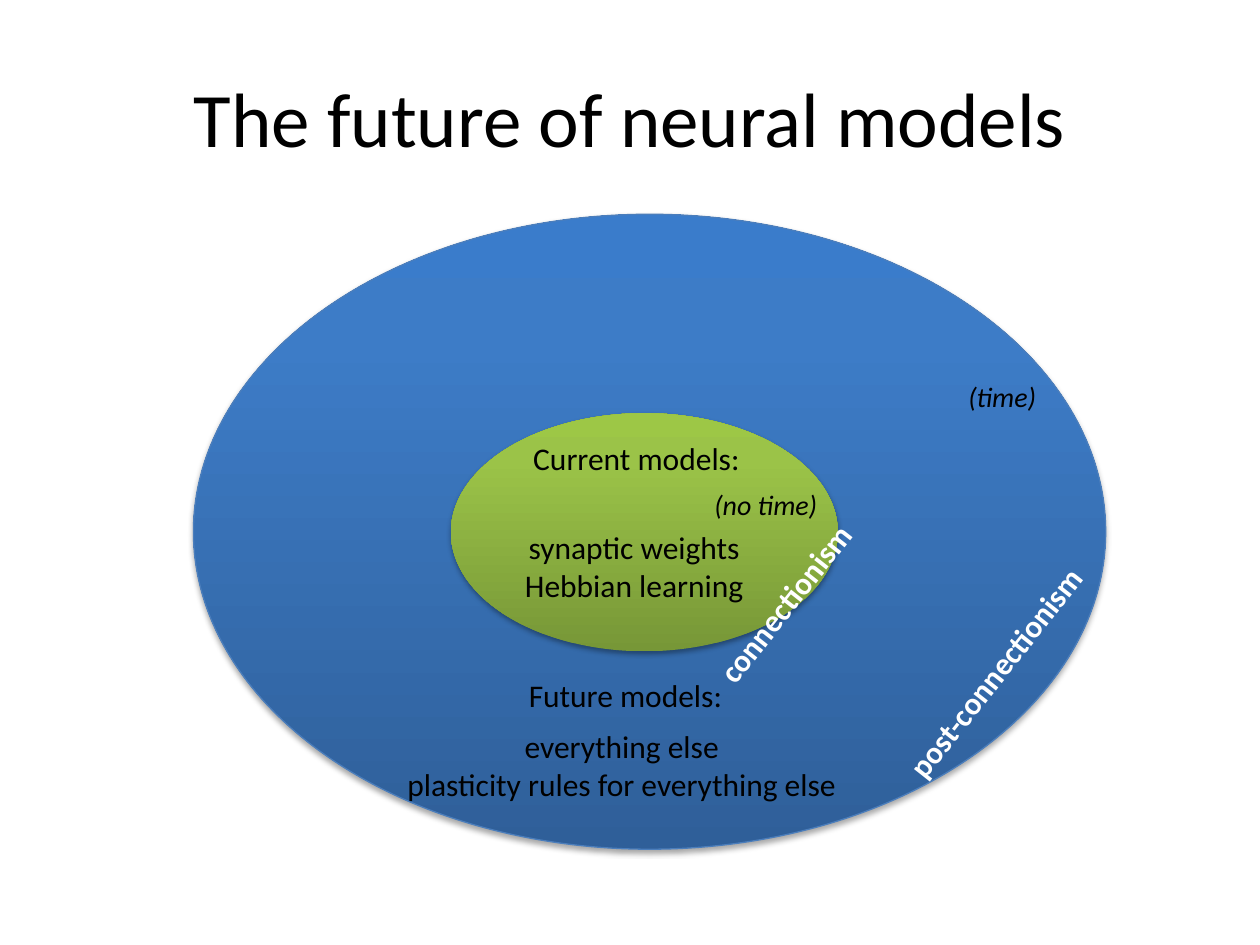
from copy import deepcopy
from dataclasses import dataclass

from lxml import etree
from pptx import Presentation
from pptx.dml.color import RGBColor
from pptx.enum.shapes import MSO_SHAPE
from pptx.enum.text import MSO_ANCHOR, MSO_AUTO_SIZE, PP_ALIGN
from pptx.oxml import parse_xml
from pptx.oxml.ns import nsdecls
from pptx.slide import Slide
from pptx.text.text import _Paragraph
from pptx.util import Cm, Pt

OVAL = MSO_SHAPE.OVAL
LEFT, CENTER = PP_ALIGN.LEFT, PP_ALIGN.CENTER
MIDDLE = MSO_ANCHOR.MIDDLE
FIT_SHAPE = MSO_AUTO_SIZE.SHAPE_TO_FIT_TEXT
FONT = "Calibri"
TILT = 308.22
COLORS = {
    "black": "000000",
    "white": "FFFFFF",
    "outline": "4B7EBC",
    "blue_dark": "2F5F99",
    "blue": "3D7CC7",
    "blue_light": "3A7CCB",
    "green_dark": "779737",
    "green": "9BC348",
    "green_light": "9DC746",
}
SHADOW = (
    f'<a:effectLst {nsdecls("a")}>'
    f'<a:outerShdw blurRad="{Pt(3.1)}" dist="{Pt(1.8)}" dir="5400000" rotWithShape="0">'
    f'<a:srgbClr val="{COLORS["black"]}"><a:alpha val="35000"/></a:srgbClr>'
    "</a:outerShdw></a:effectLst>"
)


@dataclass
class Ellipse:
    box: tuple[float, float, float, float]
    hue: str
    outlined: bool = False


@dataclass
class Label:
    box: tuple[float, float, float, float]
    lines: tuple[str, ...]
    size: int = 18
    color: str = "black"
    bold: bool = False
    italic: bool = False
    rotation: float = 0


ELLIPSES = [
    Ellipse((3.9, 4.32, 18.39, 12.8), "blue", outlined=True),
    Ellipse((9.09, 8.33, 7.8, 4.8), "green"),
]
LABELS = [
    Label((10.5, 8.73, 4.72, 1.03), ("Current models:",)),
    Label((10.31, 10.52, 4.95, 1.8), ("synaptic weights", "Hebbian learning")),
    Label((13.64, 11.63, 4.39, 1.03), ("connectionism",),
          color="white", bold=True, rotation=TILT),
    Label((17.2, 13, 5.77, 1.03), ("post-connectionism",),
          color="white", bold=True, rotation=TILT),
    Label((7.9, 14.53, 9.27, 1.8),
          ("everything else", "plasticity rules for everything else")),
    Label((14.15, 9.7, 2.74, 0.94), ("(no time)",), size=16, italic=True),
    Label((19.27, 7.52, 2.03, 0.94), ("(time)",), size=16, italic=True),
    Label((10.41, 13.5, 4.47, 1.03), ("Future models:",)),
]


def rgb(name: str) -> RGBColor:
    return RGBColor.from_string(COLORS[name])


def add_run(p: _Paragraph, text: str, size: int, color: str = "black",
            bold: bool = False, italic: bool = False) -> None:
    r = p.add_run()
    r.text = text
    r.font.name = FONT
    r.font.size = Pt(size)
    r.font.bold = bold
    r.font.italic = italic
    r.font.color.rgb = rgb(color)


def add_title(s: Slide, text: str) -> None:
    sp = s.shapes.title
    sp.left, sp.top, sp.width, sp.height = map(Cm, (1.27, 0.76, 22.86, 3.18))
    tf = sp.text_frame
    tf.vertical_anchor = MIDDLE
    p = tf.paragraphs[0]
    p.alignment = CENTER
    add_run(p, text, 44)
    s.shapes._spTree.append(sp._element)


def add_ellipse(s: Slide, ellipse: Ellipse) -> None:
    sp = s.shapes.add_shape(OVAL, *map(Cm, ellipse.box))
    sp.fill.gradient()
    sp.fill.gradient_angle = 90
    first = sp._element.spPr.find(".//{*}gs")
    first.addnext(deepcopy(first))
    shades = (f"{ellipse.hue}_dark", ellipse.hue, f"{ellipse.hue}_light")
    for stop, position, shade in zip(sp.fill.gradient_stops, (0, 0.8, 1), shades):
        stop.position = position
        stop.color.rgb = rgb(shade)
    if ellipse.outlined:
        sp.line.color.rgb = rgb("outline")
        sp.line.width = Pt(0.75)
    else:
        sp.line.fill.background()
    etree.ElementBase.append(sp._element.spPr, parse_xml(SHADOW))


def add_label(s: Slide, label: Label) -> None:
    sp = s.shapes.add_textbox(*map(Cm, label.box))
    sp.rotation = label.rotation
    tf = sp.text_frame
    tf.word_wrap = False
    tf.auto_size = FIT_SHAPE
    for i, line in enumerate(label.lines):
        p = tf.add_paragraph() if i else tf.paragraphs[0]
        p.alignment = CENTER if len(label.lines) > 1 else LEFT
        add_run(p, line, label.size, label.color, label.bold, label.italic)


def main() -> None:
    prs = Presentation()
    prs.slide_width, prs.slide_height = Cm(25.4), Cm(19.05)
    s = prs.slides.add_slide(prs.slide_layouts[5])
    for ellipse in ELLIPSES:
        add_ellipse(s, ellipse)
    add_title(s, "The future of neural models")
    for label in LABELS:
        add_label(s, label)
    prs.save("out.pptx")


if __name__ == "__main__":
    main()
